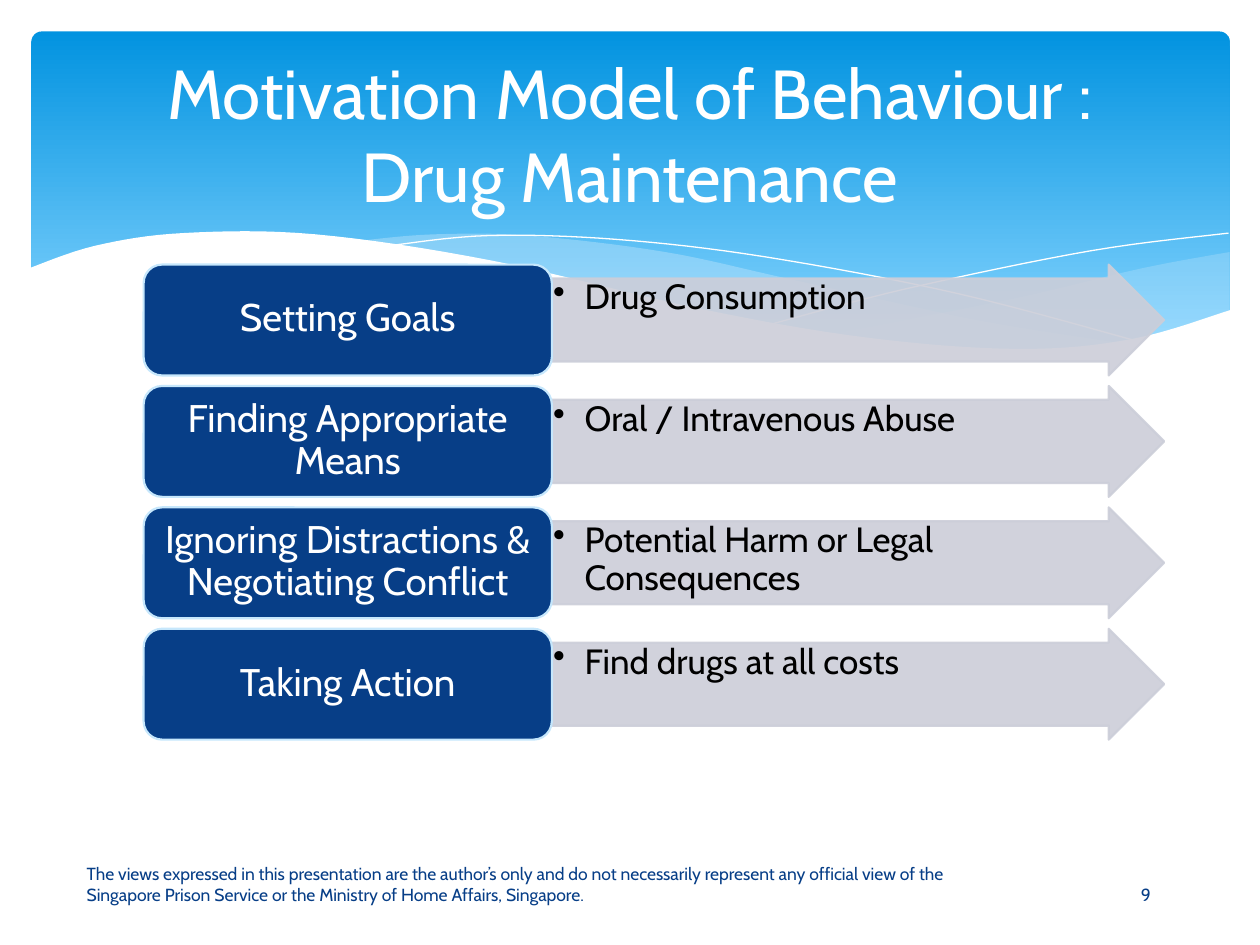
from dataclasses import dataclass

from lxml.etree import SubElement
from pptx import Presentation
from pptx.dml.color import RGBColor
from pptx.enum.shapes import MSO_SHAPE as Preset
from pptx.enum.text import MSO_ANCHOR as Anchor, PP_ALIGN as Align
from pptx.oxml.ns import qn
from pptx.util import Inches, Pt

FONT = "Cabin"
WHITE = RGBColor(0xFF, 0xFF, 0xFF)
BLACK = RGBColor(0x00, 0x00, 0x00)
NAVY = RGBColor(0x07, 0x3E, 0x87)
PALE_BLUE = RGBColor(0xC6, 0xE7, 0xFC)
GREY = RGBColor(0xCC, 0xCE, 0xD9)
SKY_TOP = RGBColor(0x02, 0x93, 0xE0)
SKY_BOTTOM = RGBColor(0x83, 0xD3, 0xFE)


@dataclass(frozen=True)
class Frame:
    left: float
    top: float
    width: float
    height: float

    def lengths(self) -> list:
        return [Inches(v) for v in (self.left, self.top, self.width, self.height)]


@dataclass(frozen=True)
class Wave:
    """Smooth edges through knots in inches: filled, or a hairline if open."""
    edges: tuple
    color: RGBColor
    opacity: int = 100
    closed: bool = True


@dataclass(frozen=True)
class Step:
    heading: str
    example: str


WAVES = (
    # Right-hand swell
    Wave((((9.76, 2), (9.06, 2.13), (8.05, 2.37), (6.61, 2.65)),
          ((6.61, 2.65), (7.45, 2.75), (8.35, 2.77), (9.21, 2.65), (9.76, 2.47))),
         PALE_BLUE, 29),
    # Broad middle swell
    Wave((((8.93, 2.73), (7.75, 2.54), (6.29, 2.22), (5.28, 2), (4.2, 1.87),
           (3.44, 1.86), (2.86, 1.91)),
          ((2.86, 1.91), (3.83, 2.07), (5.3, 2.4), (6.65, 2.66), (7.85, 2.78),
           (8.93, 2.73))),
         PALE_BLUE, 40),
    # Two hairline crests
    Wave((((3.09, 1.95), (3.87, 1.87), (4.89, 1.9), (6.08, 2.04), (7.6, 2.33),
           (9.07, 2.72)),), WHITE, closed=False),
    Wave((((6.13, 2.57), (7.2, 2.29), (8.66, 1.99), (9.75, 1.85)),),
         WHITE, closed=False),
    # White foreground
    Wave((((9.77, 2.46), (8.99, 2.69), (8.09, 2.77), (6.88, 2.68), (5.55, 2.45),
           (3.91, 2.07), (2.5, 1.86), (1.46, 1.85), (0.76, 1.95), (0.23, 2.13)),
          ((0.23, 3.29), (9.77, 3.29))),
         WHITE),
)

STEPS = (
    Step("Setting Goals", "Drug Consumption"),
    Step("Finding Appropriate Means", "Oral / Intravenous Abuse"),
    Step("Ignoring Distractions & Negotiating Conflict",
         "Potential Harm or Legal Consequences"),
    Step("Taking Action", "Find drugs at all costs"),
)
FIRST_TOP, LAST_TOP, STEP_HEIGHT = 2.1, 4.99, 0.88
STEP_PITCH = (LAST_TOP - FIRST_TOP) / (len(STEPS) - 1)


def spline(a: float, b: float, c: float, d: float, t: float) -> float:
    """Catmull-Rom value between b and c."""
    return (2 * b + (c - a) * t + (2 * a - 5 * b + 4 * c - d) * t ** 2
            + (3 * b - a - 3 * c + d) * t ** 3) / 2


def smooth(knots: tuple, parts: int = 8) -> list:
    padded = (knots[0], *knots, knots[-1])
    points = [tuple(Inches(spline(*values, part / parts)) for values in zip(*four))
              for four in zip(padded, padded[1:], padded[2:], padded[3:])
              for part in range(parts)]
    return points + [tuple(Inches(v) for v in knots[-1])]


def set_opacity(shape, percent: int) -> None:
    """Apply one opacity to every colour of the shape."""
    for color in shape._element.spPr.iter(qn("a:srgbClr")):
        SubElement(color, qn("a:alpha"), val=str(percent * 1000))


def add_wave(page, wave: Wave) -> None:
    points = [point for edge in wave.edges for point in smooth(edge)]
    builder = page.shapes.build_freeform(*points[0])
    builder.add_line_segments(points[1:], close=wave.closed)
    shape = builder.convert_to_shape()
    shape.shadow.inherit = False
    if wave.closed:
        shape.fill.solid()
        shape.fill.fore_color.rgb = wave.color
        shape.line.fill.background()
    else:
        shape.fill.background()
        shape.line.color.rgb = wave.color
        shape.line.width = Pt(0)
    if wave.opacity < 100:
        set_opacity(shape, wave.opacity)


def add_block(page, preset: Preset, frame: Frame, fill: RGBColor, line: RGBColor):
    shape = page.shapes.add_shape(preset, *frame.lengths())
    shape.shadow.inherit = False
    shape.fill.solid()
    shape.fill.fore_color.rgb = fill
    shape.line.color.rgb = line
    shape.line.width = Pt(1.25)
    return shape


def add_text(page, frame: Frame, lines: tuple, size: float, color: RGBColor,
             align: Align = Align.CENTER, anchor: Anchor = Anchor.MIDDLE,
             insets: tuple = (0.1, 0.05, 0.1, 0.05), spacing: float = 1.0):
    """Add one paragraph, with a line break between the given lines."""
    box = page.shapes.add_textbox(*frame.lengths()).text_frame
    box.word_wrap = True
    box.vertical_anchor = anchor
    (box.margin_left, box.margin_top,
     box.margin_right, box.margin_bottom) = [Inches(v) for v in insets]
    para = box.paragraphs[0]
    para.alignment = align
    para.line_spacing = spacing
    for index, line in enumerate(lines):
        if index:
            para.add_line_break()
        span = para.add_run()
        span.text = line
        span.font.name = FONT
        span.font.size = Pt(size)
        span.font.color.rgb = color
    return para


def add_bullet(para) -> None:
    properties = para._p.get_or_add_pPr()
    properties.set("marL", str(Inches(0.25)))
    properties.set("indent", str(-Inches(0.25)))
    SubElement(properties, qn("a:buChar"), char="•")


def add_step(page, step: Step, top: float) -> None:
    arrow = add_block(page, Preset.RIGHT_ARROW, Frame(4.38, top, 4.86, STEP_HEIGHT),
                      GREY, GREY)
    arrow.adjustments[0] = 0.75
    set_opacity(arrow, 90)
    example = add_text(page, Frame(4.38, top + 0.11, 4.53, 0.66), (step.example,),
                       20, BLACK, Align.LEFT, Anchor.TOP, (0.01,) * 4, 0.9)
    add_bullet(example)
    add_block(page, Preset.ROUNDED_RECTANGLE, Frame(1.14, top, 3.24, STEP_HEIGHT),
              NAVY, PALE_BLUE)
    add_text(page, Frame(1.18, top + 0.04, 3.16, 0.79), (step.heading,), 22, WHITE,
             insets=(0.09, 0.05, 0.09, 0.05), spacing=0.9)


def add_sky(page) -> None:
    sky = page.shapes.add_shape(Preset.ROUNDED_RECTANGLE,
                                *Frame(0.25, 0.25, 9.51, 2.7).lengths())
    sky.shadow.inherit = False
    sky.adjustments[0] = 0.03
    sky.line.fill.background()
    sky.fill.gradient()
    sky.fill.gradient_angle = 270
    stops = ((0, SKY_TOP), (0.9, SKY_BOTTOM))
    for stop, (position, color) in zip(sky.fill.gradient_stops, stops):
        stop.position = position
        stop.color.rgb = color


def main() -> None:
    deck = Presentation()
    deck.slide_width, deck.slide_height = Inches(10), Inches(7.5)
    page = deck.slides.add_slide(deck.slide_layouts[6])

    # Banner
    add_sky(page)
    for wave in WAVES:
        add_wave(page, wave)
    add_text(page, Frame(0.5, 0.37, 9, 1.37),
             ("Motivation Model of Behaviour :", "Drug Maintenance"), 39.6, WHITE)

    # Steps
    for index, step in enumerate(STEPS):
        add_step(page, step, FIRST_TOP + index * STEP_PITCH)

    # Footer
    disclaimer = ("The views expressed in this presentation are the author’s only and "
                  "do not necessarily represent any official view of the Singapore "
                  "Prison Service or the Ministry of Home Affairs, Singapore.")
    add_text(page, Frame(0.59, 6.9, 7.56, 0.4), (disclaimer,), 10, NAVY, Align.LEFT,
             insets=(0.1, 0, 0.1, 0.16))
    add_text(page, Frame(8.46, 6.9, 1.27, 0.4), ("9",), 10, NAVY)

    deck.save("out.pptx")


if __name__ == "__main__":
    main()
